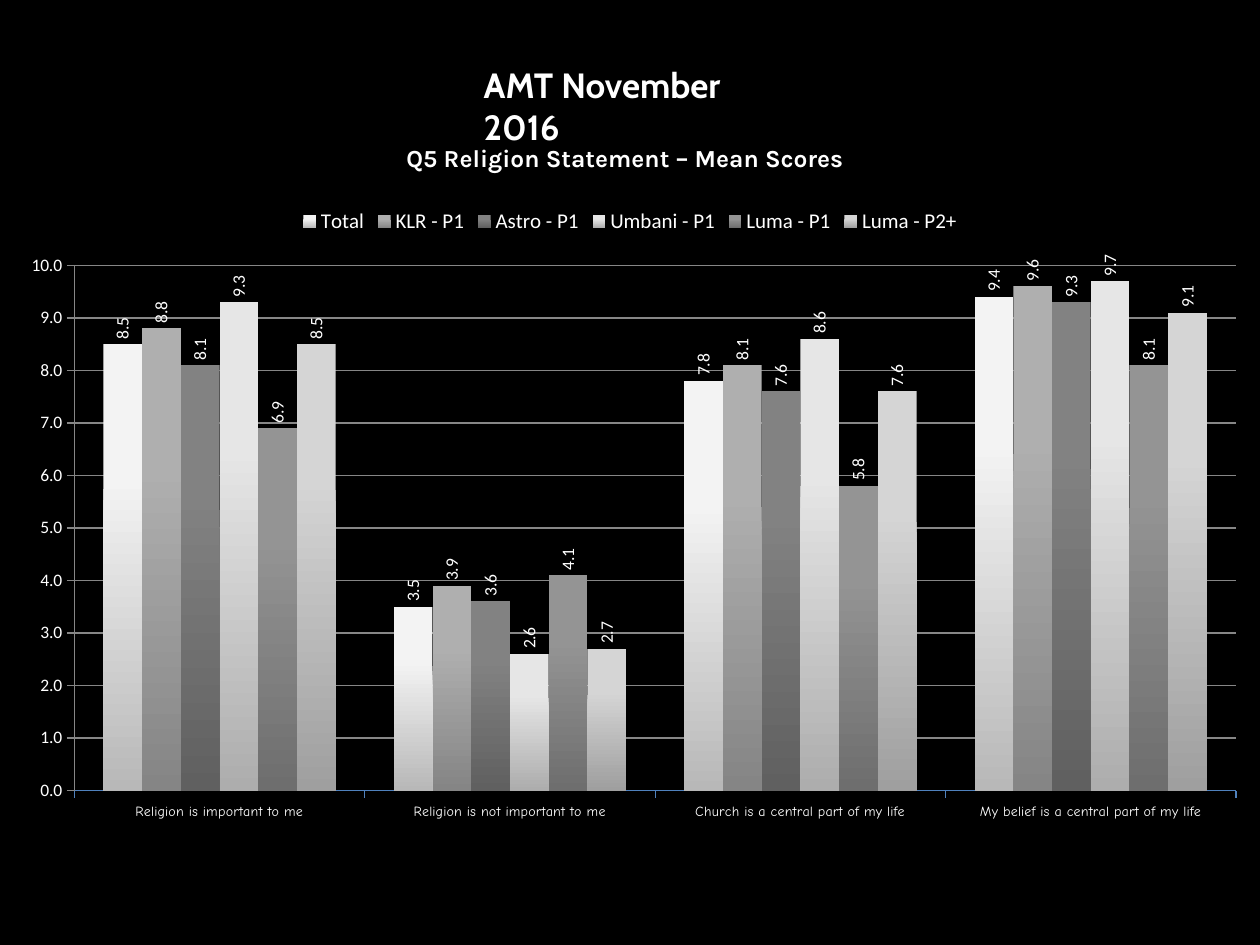
import pptx
import pptx.chart.data
import pptx.dml.color
import pptx.enum.chart
import pptx.enum.text
import pptx.oxml
import pptx.oxml.ns
import pptx.util

RGBColor = pptx.dml.color.RGBColor
BLACK = RGBColor(0x00, 0x00, 0x00)
WHITE = RGBColor(0xFF, 0xFF, 0xFF)
GREY = RGBColor(0x86, 0x86, 0x86)
BLUE = RGBColor(0x4F, 0x81, 0xBD)

EMU_PER_PX = 914400 / 126


def px(length):
    return pptx.util.Emu(round(length * EMU_PER_PX))


def set_font(font, name, size, bold=False):
    values = {"name": name, "size": pptx.util.Pt(size), "bold": bold}
    for attribute, value in values.items():
        setattr(font, attribute, value)
    font.color.rgb = WHITE


deck = pptx.Presentation()
deck.slide_width, deck.slide_height = px(1260), px(945)
page = deck.slides.add_slide(deck.slide_layouts[5])
page.background.fill.solid()
page.background.fill.fore_color.rgb = BLACK

# Chart data: name, bar shade at the top, bar shade at the foot, scores
CATEGORIES = [
    "Religion is important to me",
    "Religion is not important to me",
    "Church is a central part of my life",
    "My belief is a central part of my life",
]
SERIES = [
    ("Total", 0xF3, 0xB8, (8.5, 3.5, 7.8, 9.4)),
    ("KLR - P1", 0xAF, 0x85, (8.8, 3.9, 8.1, 9.6)),
    ("Astro - P1", 0x82, 0x60, (8.1, 3.6, 7.6, 9.3)),
    ("Umbani - P1", 0xE6, 0xAD, (9.3, 2.6, 8.6, 9.7)),
    ("Luma - P1", 0x94, 0x6E, (6.9, 4.1, 5.8, 8.1)),
    ("Luma - P2+", 0xD5, 0x9F, (8.5, 2.7, 7.6, 9.1)),
]
data = pptx.chart.data.CategoryChartData(number_format="0.0")
data.categories = CATEGORIES
for name, top_shade, foot_shade, scores in SERIES:
    data.add_series(name, scores)

chart = page.shapes.add_chart(
    pptx.enum.chart.XL_CHART_TYPE.COLUMN_CLUSTERED,
    px(0), px(195), px(1260), px(635), data,
).chart
chart.has_title = False
set_font(chart.font, "Calibri", 18)

chart.has_legend = True
chart.legend.position = pptx.enum.chart.XL_LEGEND_POSITION.TOP
chart.legend.include_in_layout = False
set_font(chart.legend.font, "Calibri", 12)

plot = chart.plots[0]
plot.gap_width = 150
plot.overlap = 0
plot.vary_by_categories = False

# Bars shaded from top to foot, with upright score labels
for series, (name, top_shade, foot_shade, scores) in zip(plot.series, SERIES):
    fill = series.format.fill
    fill.gradient()
    fill.gradient_angle = 270
    for stop, position, shade in zip(
        fill.gradient_stops, (0.3, 1), (top_shade, foot_shade)
    ):
        stop.position = position
        stop.color.rgb = RGBColor(shade, shade, shade)
    series.format.line.fill.background()
    labels = series.data_labels
    label_format = {
        "show_value": True,
        "number_format": "0.0",
        "number_format_is_linked": False,
        "position": pptx.enum.chart.XL_LABEL_POSITION.OUTSIDE_END,
    }
    for attribute, value in label_format.items():
        setattr(labels, attribute, value)
    set_font(labels.font, "Calibri", 10)
    body = labels._element.find(".//" + pptx.oxml.ns.qn("a:bodyPr"))
    body.set("rot", "-5400000")
    body.set("vert", "horz")

# Axes
value_axis = chart.value_axis
category_axis = chart.category_axis
value_format = {
    "minimum_scale": 0,
    "maximum_scale": 10,
    "major_unit": 1,
    "has_major_gridlines": True,
}
for attribute, value in value_format.items():
    setattr(value_axis, attribute, value)
value_axis.tick_labels.number_format = "0.0"
value_axis.tick_labels.number_format_is_linked = False
for axis, font_name, size in (
    (value_axis, "Calibri", 10),
    (category_axis, "Comic Neue", 8),
):
    axis.major_tick_mark = pptx.enum.chart.XL_TICK_MARK.OUTSIDE
    set_font(axis.tick_labels.font, font_name, size)
for line, color in (
    (value_axis.format.line, GREY),
    (value_axis.major_gridlines.format.line, GREY),
    (category_axis.format.line, BLUE),
):
    line.color.rgb = color
    line.width = pptx.util.Pt(0.75)

# Fixed inner plot area, as fractions of the chart
PLOT_AREA = {"x": 0.059, "y": 0.111, "w": 0.922, "h": 0.827}
modes = "".join(f'<c:{key}Mode val="edge"/>' for key in "xy")
sizes = "".join(f'<c:{key} val="{value}"/>' for key, value in PLOT_AREA.items())
layout = pptx.oxml.parse_xml(
    f'<c:layout {pptx.oxml.ns.nsdecls("c")}><c:manualLayout>'
    f'<c:layoutTarget val="inner"/>{modes}{sizes}</c:manualLayout></c:layout>'
)
plot_area = chart._chartSpace.chart.plotArea
for old_layout in plot_area.findall(pptx.oxml.ns.qn("c:layout")):
    plot_area.remove(old_layout)
plot_area.insert(0, layout)

# Title and subtitle
title = page.shapes.title
title.left, title.top, title.width, title.height = px(471), px(57), px(341), px(55)
subtitle = page.shapes.add_textbox(px(394), px(137), px(495), px(43))
for box, text, font_name, size in (
    (title, "AMT November 2016", "Cabin", 20),
    (subtitle, "Q5 Religion Statement – Mean Scores", "Karla", 14),
):
    frame = box.text_frame
    frame.word_wrap = True
    frame.auto_size = pptx.enum.text.MSO_AUTO_SIZE.NONE
    frame.vertical_anchor = pptx.enum.text.MSO_ANCHOR.TOP
    para = frame.paragraphs[0]
    para.alignment = pptx.enum.text.PP_ALIGN.LEFT
    span = para.add_run()
    span.text = text
    set_font(span.font, font_name, size, bold=True)

deck.save("out.pptx")
